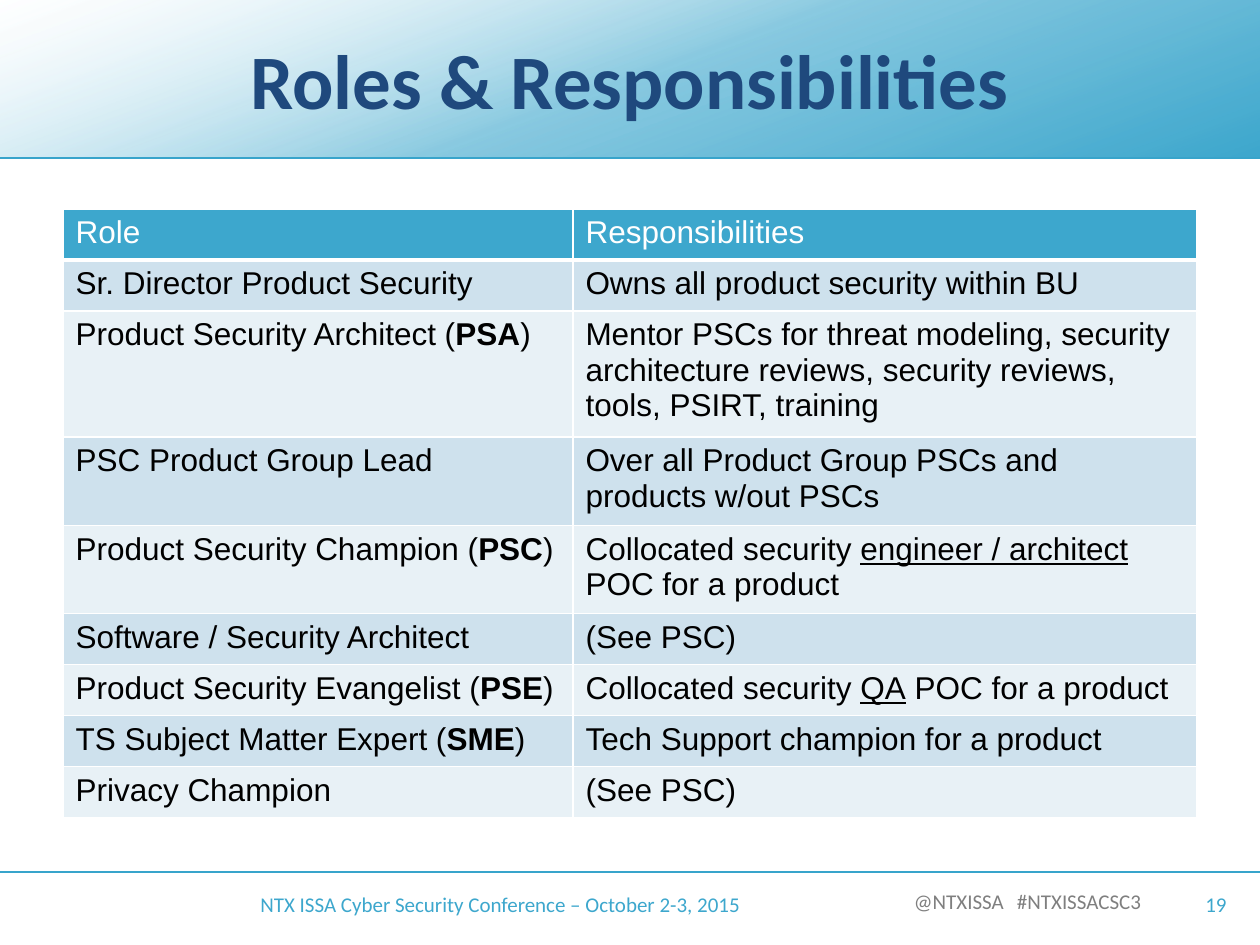
from dataclasses import dataclass

from lxml.etree import SubElement
from pptx import Presentation
from pptx.dml.color import RGBColor
from pptx.enum.shapes import MSO_CONNECTOR, MSO_SHAPE
from pptx.enum.text import MSO_ANCHOR, PP_ALIGN
from pptx.oxml import parse_xml
from pptx.oxml.ns import nsdecls, qn
from pptx.util import Emu, Pt


@dataclass(frozen=True)
class Theme:
    heading: str = "Calibri"
    body: str = "Arial"
    title_size: int = 44
    table_size: int = 18
    footer_size: int = 12
    navy: str = "1F497D"
    blue: str = "3DA7CD"
    rule: str = "38A4CB"
    grey: str = "7F7F7F"
    white: str = "FFFFFF"
    black: str = "000000"
    bands: tuple = ("CEE1ED", "E8F1F6")


ROLES = [
    (("Role",), ("Responsibilities",)),
    (("Sr. Director Product Security",), ("Owns all product security within BU",)),
    (("Product Security Architect (", "PSA", ")"),
     ("Mentor PSCs for threat modeling, security architecture reviews, "
      "security reviews, tools, PSIRT, training",)),
    (("PSC Product Group Lead",),
     ("Over all Product Group PSCs and products w/out PSCs",)),
    (("Product Security Champion (", "PSC", ")"),
     ("Collocated security ", "engineer / architect", " POC for a product")),
    (("Software / Security Architect",), ("(See PSC)",)),
    (("Product Security Evangelist (", "PSE", ")"),
     ("Collocated security ", "QA", " POC for a product")),
    (("TS Subject Matter Expert (", "SME", ")"),
     ("Tech Support champion for a product",)),
    (("Privacy Champion",), ("(See PSC)",)),
]


def px(n):
    return Emu(round(n * 914400 / 126))


class Deck:
    def __init__(self, theme):
        self.theme = theme
        self.prs = Presentation()
        self.prs.slide_width, self.prs.slide_height = px(1260), px(945)
        self.s = self.prs.slides.add_slide(self.prs.slide_layouts[5])

    def style(self, font, face, size, color, bold=False):
        font.name, font.size, font.bold = face, Pt(size), bold
        font.color.rgb = RGBColor.from_string(color)

    def band(self, x, y, w, h, stops, angle):
        sp = self.s.shapes.add_shape(MSO_SHAPE.RECTANGLE, px(x), px(y), px(w), px(h))
        sp.shadow.inherit = False
        sp.line.fill.background()
        marks = "".join(
            f'<a:gs pos="{pos * 1000}"><a:srgbClr val="{color}">'
            f'<a:alpha val="{alpha * 1000}"/></a:srgbClr></a:gs>'
            for pos, color, alpha in stops)
        grad = parse_xml(
            f'<a:gradFill {nsdecls("a")} rotWithShape="1"><a:gsLst>{marks}</a:gsLst>'
            f'<a:lin ang="{angle * 60000}" scaled="0"/></a:gradFill>')
        sp.element.spPr.find(qn("a:prstGeom")).addnext(grad)

    def rule(self, y):
        line = self.s.shapes.add_connector(
            MSO_CONNECTOR.STRAIGHT, px(0), px(y), px(1260), px(y))
        line.line.color.rgb = RGBColor.from_string(self.theme.rule)
        line.line.width = Pt(1.5)
        SubElement(line.element.spPr, qn("a:effectLst"))

    def title(self, text, x, y, w, h):
        sp = self.s.shapes.title
        sp.left, sp.top, sp.width, sp.height = px(x), px(y), px(w), px(h)
        tf = sp.text_frame
        tf.text = text
        tf.vertical_anchor = MSO_ANCHOR.MIDDLE
        p = tf.paragraphs[0]
        p.alignment = PP_ALIGN.CENTER
        t = self.theme
        self.style(p.runs[0].font, t.heading, t.title_size, t.navy, True)
        sp.element.getparent().append(sp.element)

    def footer(self, text, x, y, w, h, color, align=PP_ALIGN.LEFT, inset=None, tab=None):
        tf = self.s.shapes.add_textbox(px(x), px(y), px(w), px(h)).text_frame
        tf.word_wrap = True
        tf.vertical_anchor = MSO_ANCHOR.MIDDLE
        tf.text = text
        p = tf.paragraphs[0]
        p.alignment = align
        if inset:
            tf.margin_left = px(inset)
        if tab:
            tabs = SubElement(p._p.get_or_add_pPr(), qn("a:tabLst"))
            SubElement(tabs, qn("a:tab"), pos=str(px(tab)), algn="l")
        for r in p.runs:
            self.style(r.font, self.theme.heading, self.theme.footer_size, color)

    def borders(self, cell, bottom):
        tcPr = cell._tc.get_or_add_tcPr()
        sides = {"lnL": 1, "lnR": 1, "lnT": 1, "lnB": bottom}
        for i, (side, width) in enumerate(sides.items()):
            tcPr.insert(i, parse_xml(
                f'<a:{side} {nsdecls("a")} w="{Pt(width)}"><a:solidFill>'
                f'<a:srgbClr val="{self.theme.white}"/></a:solidFill></a:{side}>'))

    def table(self, rows, x, y, widths, row_height):
        t = self.theme
        table = self.s.shapes.add_table(
            len(rows), len(widths), px(x), px(y),
            px(sum(widths)), px(row_height * len(rows))).table
        table.horz_banding = False
        for column, width in zip(table.columns, widths):
            column.width = px(width)
        for i, row in enumerate(rows):
            fill = t.bands[(i - 1) % 2] if i else t.blue
            for j, parts in enumerate(row):
                cell = table.cell(i, j)
                cell.fill.solid()
                cell.fill.fore_color.rgb = RGBColor.from_string(fill)
                self.borders(cell, 1 if i else 3)
                p = cell.text_frame.paragraphs[0]
                for k, part in enumerate(parts):
                    r = p.add_run()
                    r.text = part
                    marked = k == 1
                    self.style(r.font, t.body, t.table_size,
                               t.black if i else t.white, marked and j == 0)
                    if marked and j == 1:
                        r.font.underline = True


def main():
    theme = Theme()
    deck = Deck(theme)
    deck.footer("@NTXISSA\t#NTXISSACSC3", 703, 879, 451, 44, theme.grey,
                inset=211, tab=103)
    deck.band(0, 0, 1260, 158,
              [(0, theme.white, 20), (50, theme.blue, 60), (100, theme.blue, 100)], 70)
    for y in (158, 872):
        deck.rule(y)
    deck.title("Roles & Responsibilities", 21, 21, 1218, 116)
    deck.footer("NTX ISSA Cyber Security Conference – October 2-3, 2015",
                248, 882, 602, 44, theme.blue)
    deck.footer("19", 1166, 882, 73, 44, theme.blue, PP_ALIGN.RIGHT)
    deck.table(ROLES, 63, 209, (510, 624), 51)
    deck.prs.save("out.pptx")


if __name__ == "__main__":
    main()
